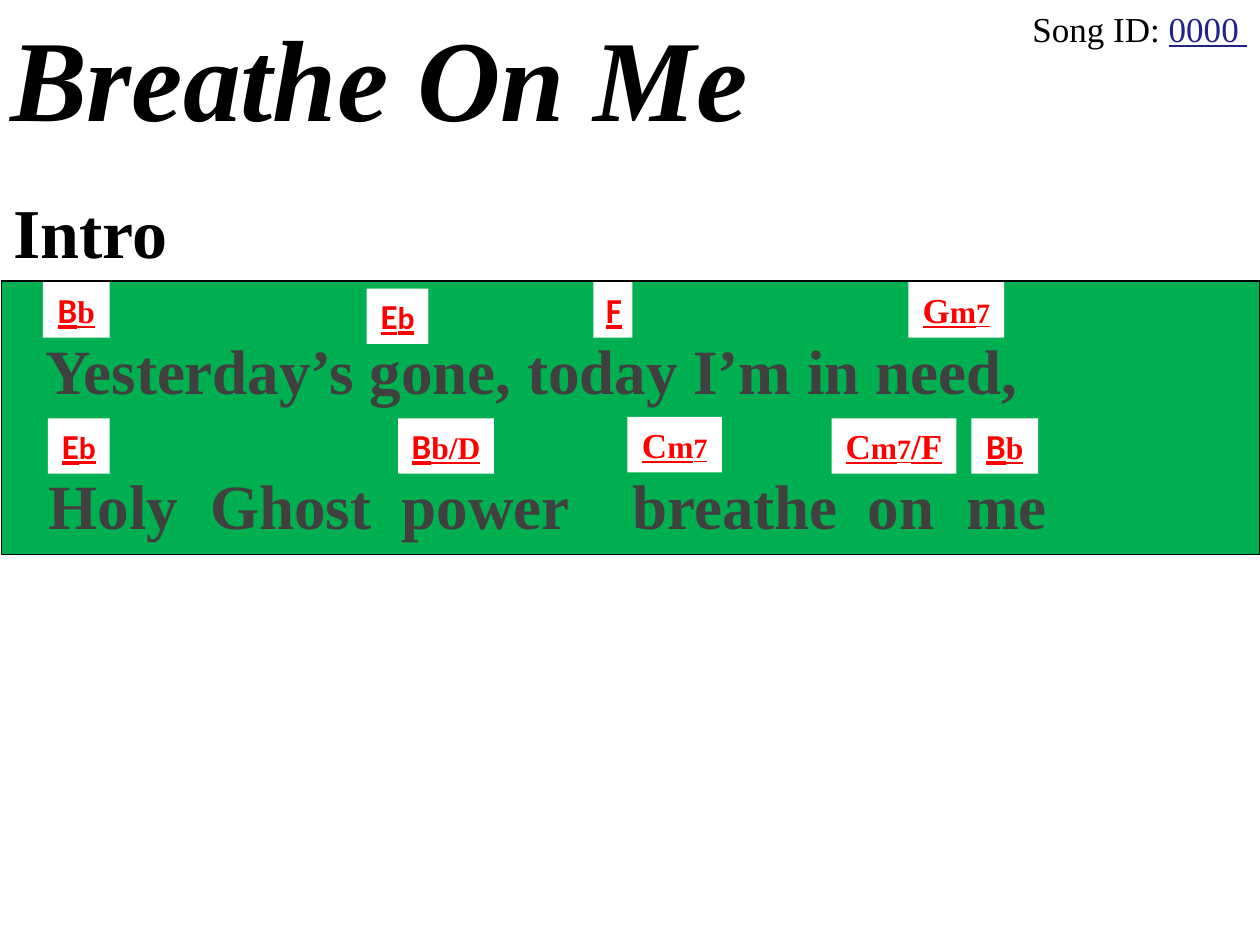
from dataclasses import dataclass

from lxml import etree
from pptx import Presentation
from pptx.dml.color import RGBColor
from pptx.enum.shapes import MSO_SHAPE
from pptx.enum.text import MSO_ANCHOR, MSO_AUTO_SIZE, PP_ALIGN
from pptx.oxml.ns import qn
from pptx.util import Inches, Pt

RECTANGLE = MSO_SHAPE.RECTANGLE
LEFT, CENTER, RIGHT = PP_ALIGN.LEFT, PP_ALIGN.CENTER, PP_ALIGN.RIGHT
TOP = MSO_ANCHOR.TOP
GROW = MSO_AUTO_SIZE.SHAPE_TO_FIT_TEXT

SERIF, SANS = "Times New Roman", "Calibri"
BLACK, WHITE, RED = "000000", "FFFFFF", "FF0000"
GREEN, GRAY, NAVY = "00B050", "404040", "22228B"

CHORD_HEIGHT = 0.44
WORD_STOPS = (0.25, 1.53, 3.05, 4.88, 6.75, 7.53)


@dataclass(frozen=True)
class Run:
    text: str
    size: float
    font: str = SERIF
    color: str = BLACK
    bold: bool = True
    italic: bool = False
    underline: bool = False


@dataclass(frozen=True)
class Chord:
    left: float
    top: float
    width: float
    symbols: tuple[tuple[str, int, str], ...]


@dataclass(frozen=True)
class Lyric:
    left: float
    top: float
    text: str


B_FLAT = (("B", 20, SANS), ("b", 18, SERIF))
E_FLAT = (("E", 20, SANS), ("b", 18, SANS))
C_MINOR_7 = (("C", 20, SERIF), ("m", 18, SERIF), ("7", 16, SERIF))
G_MINOR_7 = (("G", 20, SERIF),) + C_MINOR_7[1:]

CHORDS = (
    Chord(0.34, 2.24, 0.53, B_FLAT),
    Chord(2.91, 2.29, 0.49, E_FLAT),
    Chord(4.71, 2.24, 0.31, (("F", 20, SANS),)),
    Chord(7.21, 2.24, 0.76, G_MINOR_7),
    Chord(0.38, 3.32, 0.49, E_FLAT),
    Chord(3.16, 3.32, 0.76, (("B", 20, SANS), ("b/D", 18, SERIF))),
    Chord(4.98, 3.31, 0.75, C_MINOR_7),
    Chord(6.6, 3.32, 0.99, C_MINOR_7 + (("/F", 20, SERIF),)),
    Chord(7.71, 3.32, 0.53, B_FLAT),
)

LYRICS = (
    Lyric(0.01, 2.58, "\tYesterday’s gone, today I’m in need,"),
    Lyric(0.04, 3.65, "\tHoly\tGhost\tpower\tbreathe\ton\tme"),
)


def rgb(color: str) -> RGBColor:
    return RGBColor.from_string(color)


def set_paragraph_spacing(paragraph, tab_stops: tuple[float, ...]) -> None:
    """Set half a line of space before, and left tab stops in inches."""
    properties = paragraph._p.get_or_add_pPr()
    before = etree.SubElement(properties, qn("a:spcBef"))
    etree.SubElement(before, qn("a:spcPct"), val="50000")
    if tab_stops:
        tab_list = etree.SubElement(properties, qn("a:tabLst"))
        for stop in tab_stops:
            etree.SubElement(tab_list, qn("a:tab"), pos=str(Inches(stop)), algn="l")


def write_text(shape, runs, alignment=LEFT, wrap=True, tab_stops=()) -> None:
    frame = shape.text_frame
    frame.word_wrap = wrap
    frame.auto_size = GROW
    frame.vertical_anchor = TOP
    paragraph = frame.paragraphs[0]
    paragraph.alignment = alignment
    set_paragraph_spacing(paragraph, tab_stops)
    for item in runs:
        run = paragraph.add_run()
        run.text = item.text
        font = run.font
        font.name, font.size = item.font, Pt(item.size)
        font.bold, font.italic = item.bold, item.italic
        font.underline = item.underline
        font.color.rgb = rgb(item.color)


def add_rectangle(slide, left: float, top: float, width: float, height: float,
                  fill: str = WHITE):
    shape = slide.shapes.add_shape(
        RECTANGLE, Inches(left), Inches(top), Inches(width), Inches(height))
    shape.shadow.inherit = False
    shape.fill.solid()
    shape.fill.fore_color.rgb = rgb(fill)
    shape.line.fill.background()
    return shape


def add_title(slide) -> None:
    title = slide.shapes.title
    title.left, title.top = Inches(-0.02), Inches(0)
    title.width, title.height = Inches(7.61), Inches(1.21)
    title.fill.solid()
    title.fill.fore_color.rgb = rgb(WHITE)
    write_text(title, [Run("Breathe On Me", 66, italic=True)])


def add_lyric(slide, lyric: Lyric) -> None:
    box = slide.shapes.add_textbox(
        Inches(lyric.left), Inches(lyric.top), Inches(9.99), Inches(0.71))
    write_text(box, [Run(lyric.text, 36, color=GRAY)], tab_stops=WORD_STOPS)


def add_chord(slide, chord: Chord) -> None:
    label = add_rectangle(slide, chord.left, chord.top, chord.width, CHORD_HEIGHT)
    runs = [Run(text, size, font, RED, underline=True)
            for text, size, font in chord.symbols]
    write_text(label, runs, CENTER, wrap=False)


def main() -> None:
    presentation = Presentation()
    presentation.slide_width = Inches(10)
    presentation.slide_height = Inches(7.5)
    slide = presentation.slides.add_slide(presentation.slide_layouts[5])

    add_title(slide)
    song_id = add_rectangle(slide, 6.01, 0.01, 3.99, 0.44)
    write_text(song_id, [
        Run("Song ID: ", 20, bold=False),
        Run("0000 ", 20, color=NAVY, bold=False, underline=True),
    ], RIGHT)

    panel = add_rectangle(slide, 0.01, 2.23, 9.99, 2.17, GREEN)
    panel.line.color.rgb = rgb(BLACK)
    panel.line.width = Pt(0.75)
    section = add_rectangle(slide, 0.01, 1.45, 3.33, 0.77)
    write_text(section, [Run("Intro", 40)])

    for lyric in LYRICS:
        add_lyric(slide, lyric)
    for chord in CHORDS:
        add_chord(slide, chord)

    presentation.save("out.pptx")


if __name__ == "__main__":
    main()
